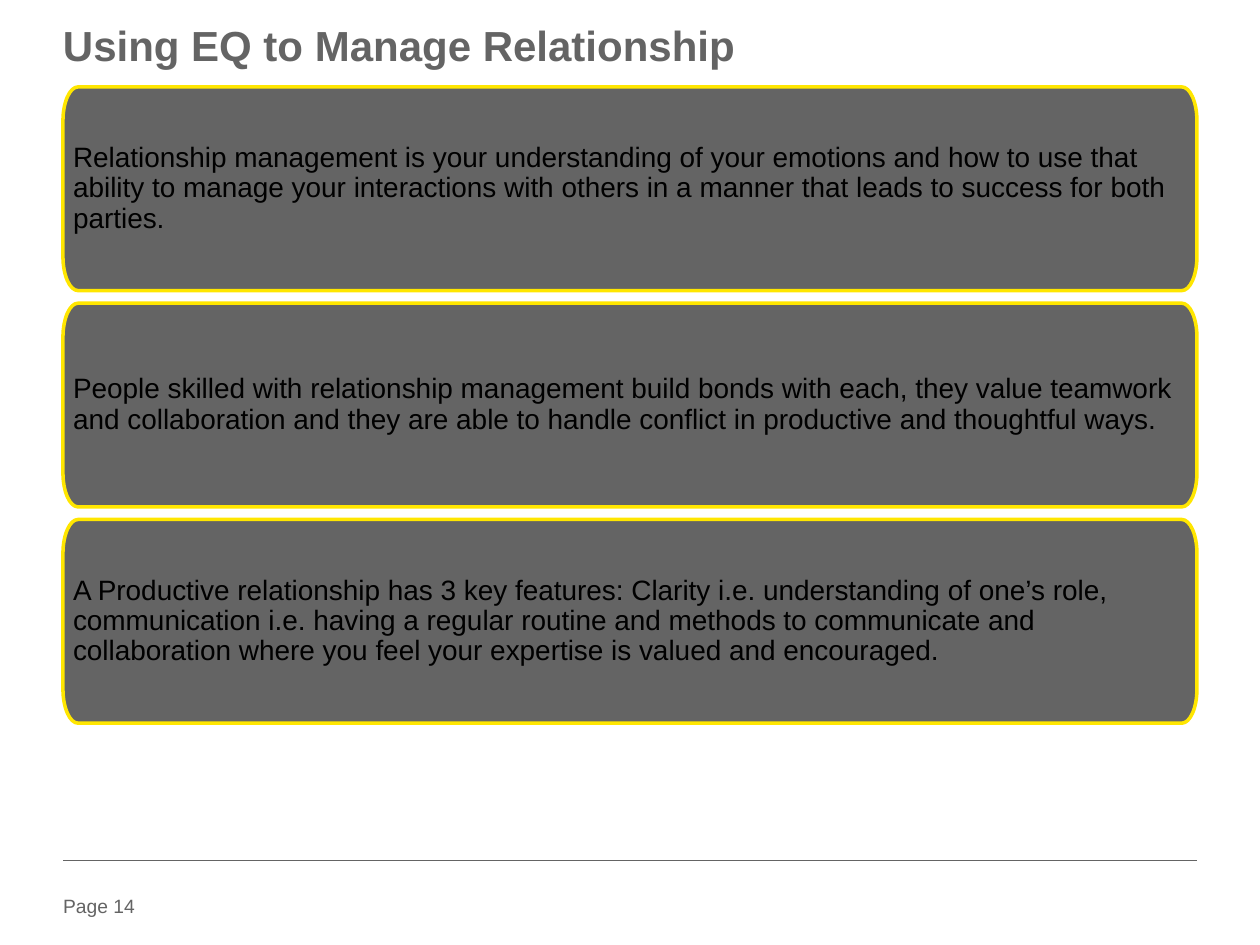
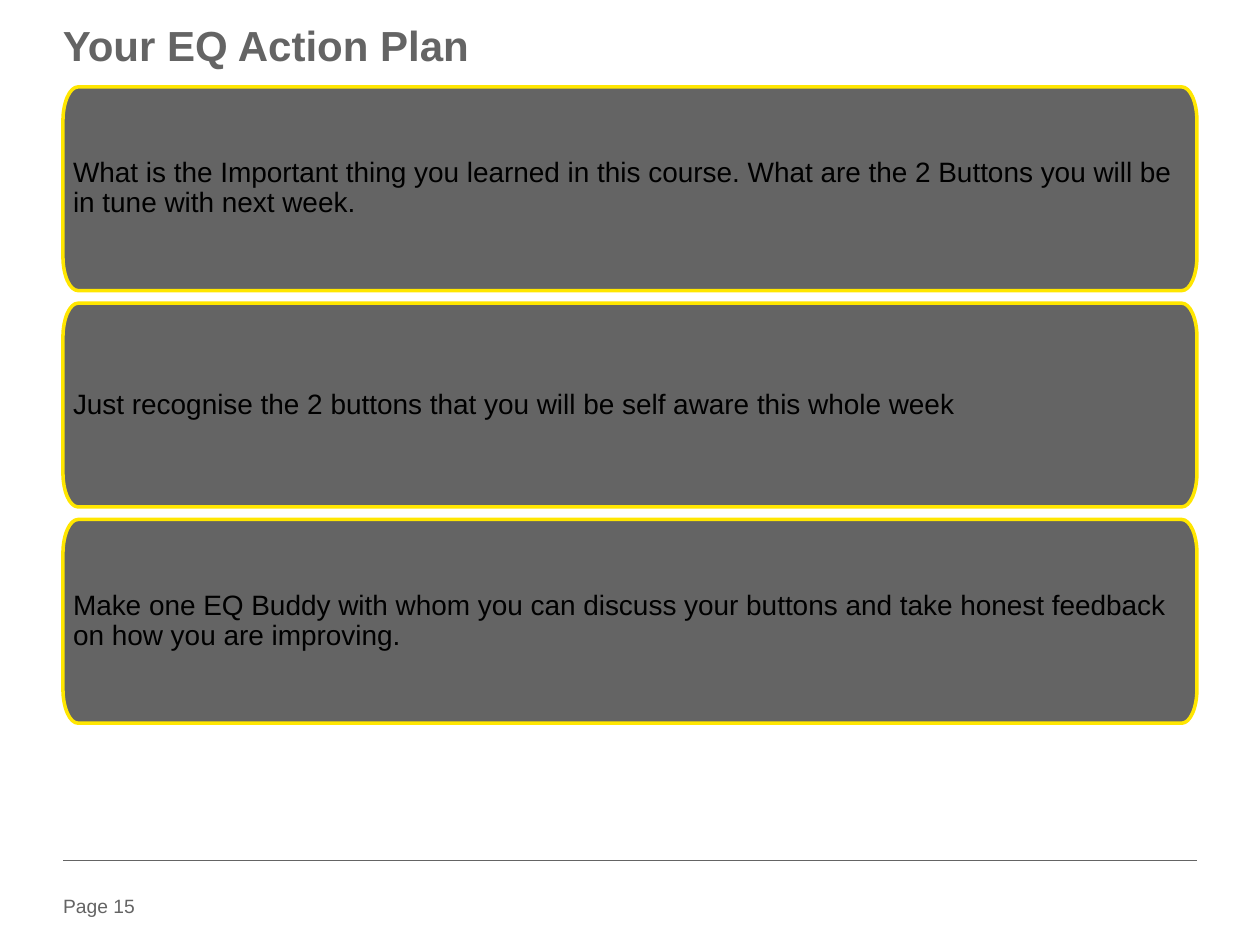
import pptx
import pptx.dml.color
import pptx.enum.shapes
import pptx.enum.text
import pptx.oxml
import pptx.oxml.ns
import pptx.util
import lxml.etree

GREY = "646464"
YELLOW = "FFE600"
BLACK = "000000"
FONT = "Arial"
ARC = 0.55  # share of a corner's reach at which a Bézier handle draws a quarter ellipse

PAGES = [
    (14, "Using EQ to Manage Relationship", [
        "Relationship management is your understanding of your emotions and how to use that ability "
        "to manage your interactions with others in a manner that leads to success for both parties.",
        "People skilled with relationship management build bonds with each, they value teamwork and "
        "collaboration and they are able to handle conflict in productive and thoughtful ways.",
        "A Productive relationship has 3 key features: Clarity i.e. understanding of one’s role, "
        "communication i.e. having a regular routine and methods to communicate and collaboration "
        "where you feel your expertise is valued and encouraged.",
    ]),
    (15, "Your EQ Action Plan", [
        "What is the Important thing you learned in this course. What are the 2 Buttons you will be "
        "in tune with next week.",
        "Just recognise the 2 buttons that you will be self aware this whole week",
        "Make one EQ Buddy with whom you can discuss your buttons and take honest feedback on how "
        "you are improving.",
    ]),
]


def color(hex_string):
    return pptx.dml.color.RGBColor.from_string(hex_string)


def write(shape, text, size, hex_string, inset=0, spacing=None, bold=False):
    """Fill a shape with one left-aligned, wrapped paragraph."""
    frame = shape.text_frame
    frame.word_wrap = True
    frame.margin_left = frame.margin_right = inset
    frame.margin_top = frame.margin_bottom = inset
    paragraph = frame.paragraphs[0]
    paragraph.text = text
    paragraph.alignment = pptx.enum.text.PP_ALIGN.LEFT
    paragraph.line_spacing = spacing
    paragraph.font.name = FONT
    paragraph.font.size = pptx.util.Pt(size)
    paragraph.font.bold = bold
    paragraph.font.color.rgb = color(hex_string)


presentation = pptx.Presentation()
presentation.slide_width = pptx.util.Inches(10)
presentation.slide_height = pptx.util.Inches(7.5)
blank_layout = presentation.slide_layouts[6]

# Shared grid: one column between the margins, three rows of panels
left = int(presentation.slide_width * 0.05)
right = presentation.slide_width - left
column_width = right - left
panels_top = pptx.util.Inches(0.69)
panels_bottom = pptx.util.Inches(5.74)
gap = pptx.util.Inches(0.1)
row_pitch = (panels_bottom - panels_top + gap) // 3
panel_height = row_pitch - gap
corner_width = pptx.util.Inches(0.12)
corner_height = panel_height // 6
rules = [(1.14, YELLOW, 1.5), (6.83, GREY, 0.25)]

for page_number, title, messages in PAGES:
    slide = presentation.slides.add_slide(blank_layout)

    page_box = slide.shapes.add_textbox(
        left, pptx.util.Inches(7.1), pptx.util.Inches(0.79), pptx.util.Inches(0.22))
    write(page_box, f"Page {page_number}", 11, GREY)

    for rule_y, rule_color, rule_width in rules:
        y = pptx.util.Inches(rule_y)
        rule = slide.shapes.add_connector(
            pptx.enum.shapes.MSO_CONNECTOR.STRAIGHT, left, y, right, y)
        rule.line.color.rgb = color(rule_color)
        rule.line.width = pptx.util.Pt(rule_width)
        lxml.etree.SubElement(rule._element.spPr, pptx.oxml.ns.qn("a:effectLst"))

    title_box = slide.shapes.add_textbox(
        left, pptx.util.Inches(0.22), column_width, pptx.util.Inches(0.37))
    write(title_box, title, 24, GREY, spacing=0.85, bold=True)

    for row, message in enumerate(messages):
        top = panels_top + row * row_pitch
        bottom = top + panel_height
        inner_left, inner_right = left + corner_width, right - corner_width
        inner_top, inner_bottom = top + corner_height, bottom - corner_height
        outline = [
            (left, inner_top), (inner_left, top),
            (inner_right, top), (right, inner_top),
            (right, inner_bottom), (inner_right, bottom),
            (inner_left, bottom), (left, inner_bottom),
        ]
        corners = [(left, top), (right, top), (right, bottom), (left, bottom)]
        builder = slide.shapes.build_freeform(*outline[0])
        builder.add_line_segments(outline[1:] + outline[:1], close=True)
        panel = builder.convert_to_shape()

        # Every other segment cuts a corner: bend it into a quarter ellipse
        segments = list(panel._element.iter(pptx.oxml.ns.qn("a:lnTo")))
        for index, corner in enumerate(corners):
            start, end = outline[2 * index:2 * index + 2]
            segment = segments[2 * index]
            curve = lxml.etree.Element(pptx.oxml.ns.qn("a:cubicBezTo"))
            for anchor, reach in ((start, ARC), (end, ARC), (end, 0)):
                x, y = (a + reach * (c - a) for a, c in zip(anchor, corner))
                lxml.etree.SubElement(curve, pptx.oxml.ns.qn("a:pt"),
                                      x=str(round(x - left)), y=str(round(y - top)))
            segment.getparent().replace(segment, curve)

        panel.shadow.inherit = False
        panel.fill.solid()
        panel.fill.fore_color.rgb = color(GREY)
        panel.line.color.rgb = color(YELLOW)
        panel.line.width = pptx.util.Pt(2)
        panel.text_frame.vertical_anchor = pptx.enum.text.MSO_ANCHOR.MIDDLE
        write(panel, message, 16, BLACK, inset=pptx.util.Inches(0.08), spacing=0.9)

presentation.save("out.pptx")
